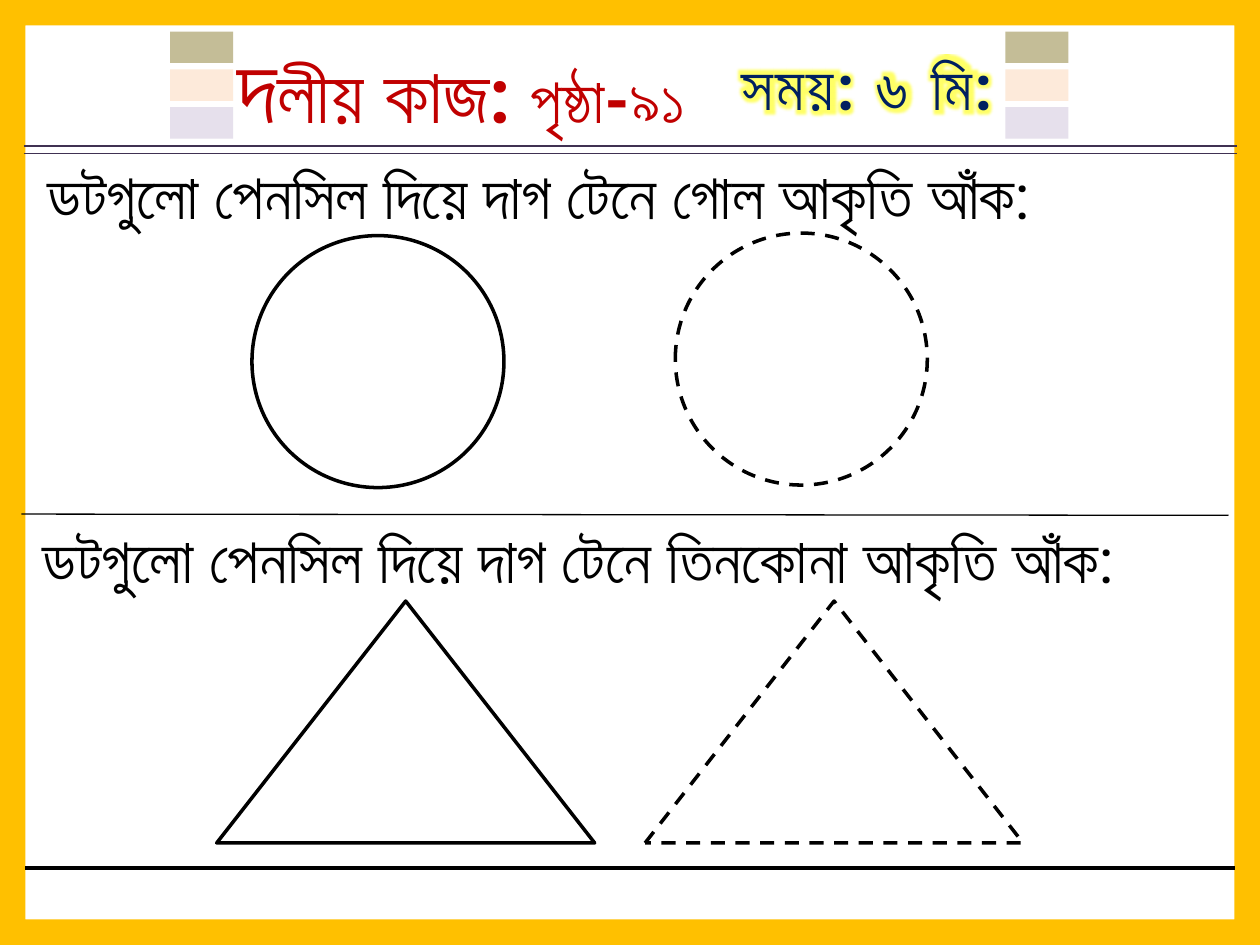
from dataclasses import dataclass

from lxml import etree
from pptx import Presentation
from pptx import util as u
from pptx.dml.color import RGBColor
from pptx.enum import dml, shapes, text
from pptx.oxml import ns

COLUMNS, ROWS = 100, 75


@dataclass(frozen=True)
class Theme:
    font: str = "Roboto"
    frame: str = "FFC000"
    ink: str = "000000"
    rule: str = "403152"
    heading: str = "C00000"
    timer: str = "002060"
    glow: str = "FFFF00"
    outline: str = "FFFFFF"
    swatches: tuple = ("C4BD97", "FDEADA", "E6E0EC")
    large: int = 54
    medium: int = 44
    body: int = 36
    thin: float = 0.75
    thick: float = 2


def add_xml(parent, tag, **attributes):
    return etree.SubElement(parent, ns.qn(tag), attributes)


class SlideBuilder:
    """Draws on one slide; lengths are columns and rows of the grid."""

    def __init__(self, presentation, theme):
        self.theme = theme
        self.slide = presentation.slides.add_slide(presentation.slide_layouts[5])
        self.column = presentation.slide_width / COLUMNS
        self.row = presentation.slide_height / ROWS

    def place(self, *lengths):
        """Turn alternating columns and rows into slide units."""
        return [u.Emu(round(length * (self.row if index % 2 else self.column)))
                for index, length in enumerate(lengths)]

    def shape(self, kind, box, fill=None, dash=None, outlined=False):
        shape = self.slide.shapes.add_shape(kind, *self.place(*box))
        shape.shadow.inherit = False
        if fill:
            shape.fill.solid()
            shape.fill.fore_color.rgb = RGBColor.from_string(fill)
        else:
            shape.fill.background()
        if outlined:
            self.stroke(shape.line, self.theme.ink, self.theme.thick)
            if dash:
                shape.line.dash_style = dash
        else:
            shape.line.fill.background()
        return shape

    def stroke(self, line, color, width):
        line.color.rgb = RGBColor.from_string(color)
        line.width = u.Pt(width)

    def rule(self, ends, color, width):
        connector = self.slide.shapes.add_connector(
            shapes.MSO_CONNECTOR.STRAIGHT, *self.place(*ends))
        self.stroke(connector.line, color, width)
        add_xml(connector._element.spPr, "a:effectLst")

    def fill_text(self, shape, runs, color, bold=False, wrap=True,
                  align=text.PP_ALIGN.LEFT):
        frame = shape.text_frame
        frame_format = {"word_wrap": wrap,
                        "auto_size": text.MSO_AUTO_SIZE.SHAPE_TO_FIT_TEXT,
                        "vertical_anchor": text.MSO_ANCHOR.TOP}
        for name, value in frame_format.items():
            setattr(frame, name, value)
        paragraph = frame.paragraphs[0]
        paragraph.alignment = align
        for words, size in runs:
            run = paragraph.add_run()
            run.text = words
            run_format = {"name": self.theme.font, "size": u.Pt(size), "bold": bold}
            for name, value in run_format.items():
                setattr(run.font, name, value)
            run.font.color.rgb = RGBColor.from_string(color)
        return paragraph

    def title(self, box, runs):
        shape = self.slide.shapes.title
        for name, value in zip(("left", "top", "width", "height"), self.place(*box)):
            setattr(shape, name, value)
        paragraph = self.fill_text(shape, runs, self.theme.heading, bold=True,
                                   wrap=False, align=text.PP_ALIGN.CENTER)
        for run in paragraph.runs:
            properties = run._r.get_or_add_rPr()
            line = add_xml(properties, "a:ln", w=str(u.Pt(1)))
            fill = add_xml(line, "a:solidFill")
            add_xml(fill, "a:srgbClr", val=self.theme.outline)
            add_xml(line, "a:prstDash", val="sysDot")
            properties.insert(0, line)

    def text(self, box, words, color, **options):
        shape = self.slide.shapes.add_textbox(*self.place(*box))
        return self.fill_text(shape, [(words, self.theme.body)], color, **options)

    def timer(self, box, words):
        paragraph = self.text(box, words, self.theme.timer, bold=True, wrap=False,
                              align=text.PP_ALIGN.CENTER)
        properties = paragraph.runs[0]._r.get_or_add_rPr()
        properties.set("spc", "150")
        effects = add_xml(properties, "a:effectLst")
        glow = add_xml(effects, "a:glow", rad=str(u.Pt(8)))
        color = add_xml(glow, "a:srgbClr", val=self.theme.glow)
        add_xml(color, "a:alpha", val="60000")
        properties.find(ns.qn("a:solidFill")).addnext(effects)


def main():
    presentation = Presentation()
    presentation.slide_width, presentation.slide_height = u.Inches(10), u.Inches(7.5)
    theme = Theme()
    builder = SlideBuilder(presentation, theme)
    kinds = shapes.MSO_SHAPE
    dash = dml.MSO_LINE.DASH

    border = builder.shape(kinds.FRAME, (0, 0, COLUMNS, ROWS), fill=theme.frame)
    border.adjustments[0] = 0.027
    builder.rule((2, 68.9, 98, 68.9), theme.ink, theme.thick)
    for row in (11.6, 12.2):
        builder.rule((1.9, row, 98.2, row), theme.rule, theme.thin)
    for column in (13.5, 79.8):
        for index, color in enumerate(theme.swatches):
            builder.shape(kinds.RECTANGLE, (column, 2.5 + 3 * index, 5, 2.5), fill=color)

    builder.title((17.7, 1.8, 40, 10.1),
                  [("দ", theme.large), ("লীয় কাজ: ", theme.medium),
                   ("পৃষ্ঠা-৯১", theme.body), (" ", theme.large)])
    builder.timer((57.5, 3.3, 22.6, 7.1), "সময়: ৬ মি:")

    builder.text((2.8, 11.9, 93.9, 7.1),
                 "ডটগুলো পেনসিল দিয়ে দাগ টেনে গোল আকৃতি আঁক:", theme.ink)
    builder.shape(kinds.OVAL, (53.6, 18.5, 20, 20), dash=dash, outlined=True)
    builder.shape(kinds.OVAL, (20, 18.7, 20, 20), outlined=True)
    builder.rule((1.7, 40.8, 97.5, 40.9), theme.ink, theme.thin)

    builder.text((2.4, 40.8, 93.9, 7.1),
                 "ডটগুলো পেনসিল দিয়ে দাগ টেনে তিনকোনা আকৃতি আঁক:", theme.ink)
    for column, style in ((51.2, dash), (17.2, None)):
        builder.shape(kinds.ISOSCELES_TRIANGLE, (column, 47.7, 30, 19.2),
                      dash=style, outlined=True)

    presentation.save("out.pptx")


if __name__ == "__main__":
    main()
